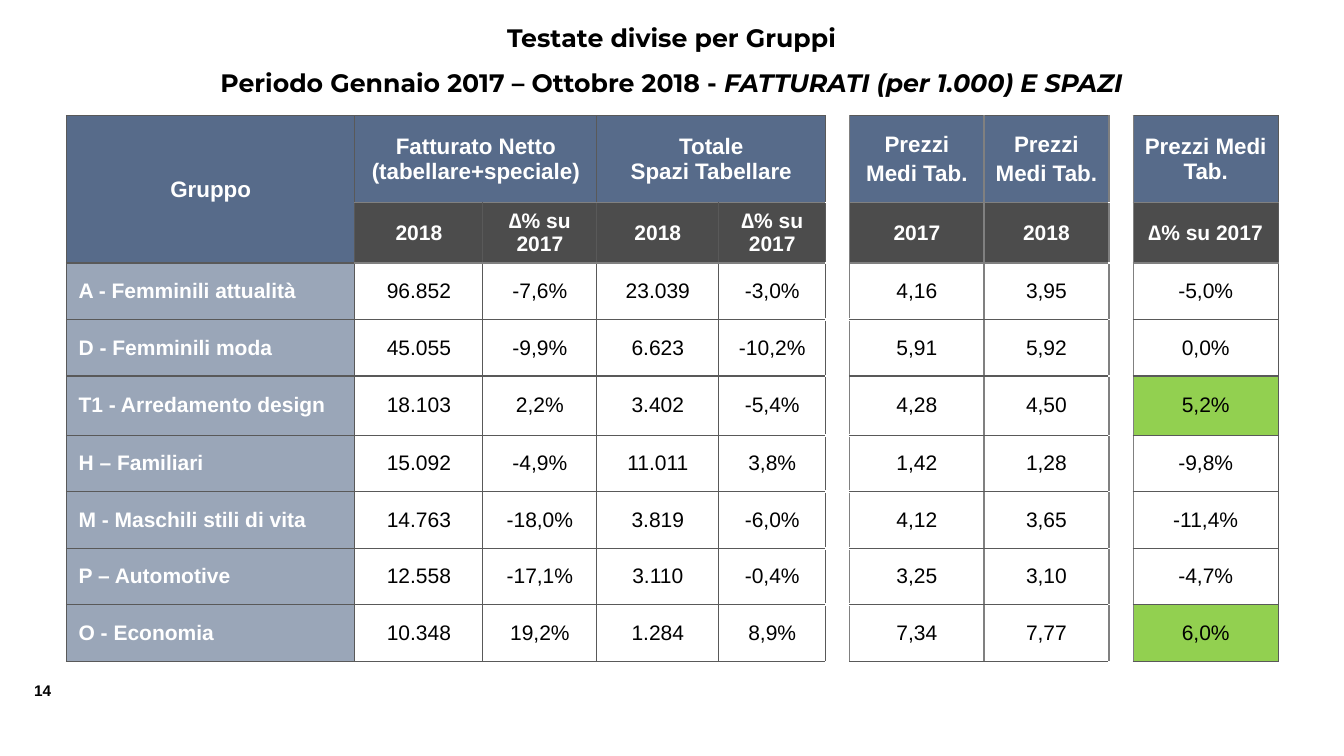
from lxml.etree import SubElement
from pptx import Presentation
from pptx.dml.color import RGBColor
from pptx.enum.text import MSO_ANCHOR as ANCHOR, PP_ALIGN as ALIGN
from pptx.oxml.ns import qn
from pptx.util import Inches, Pt

COLORS = {
    "blue": "576B8A", "black": "000000", "white": "FFFFFF", "green": "92D050",
    "dark": "595959", "grey": "808080",
}
SLIDE_W, SLIDE_H = Inches(13.33), Inches(7.5)

# Table grid, in inches
COL_WIDTHS = [2.86, 1.27, 1.13, 1.21, 1.06, 0.24, 1.33, 1.24, 0.24, 1.44]
ROW_HEIGHTS = [0.86, 0.6, 0.56, 0.56, 0.59, 0.56, 0.56, 0.56, 0.56]
GAP_COLS = (5, 8)
HEADER_ROWS = 2
MERGES = [((0, 0), (1, 0)), ((0, 1), (0, 2)), ((0, 3), (0, 4))]
HIGHLIGHTS = ("5,2%", "6,0%")

DELTA, PRICES = "∆% su 2017", "Prezzi\nMedi Tab."
ROWS = [
    ["Gruppo", "Fatturato Netto (tabellare+speciale)", "", "Totale\nSpazi Tabellare", "",
     "", PRICES, PRICES, "", "Prezzi Medi Tab."],
    ["", "2018", DELTA, "2018", DELTA, "", "2017", "2018", "", DELTA],
    ["A - Femminili attualità", "96.852", "-7,6%", "23.039", "-3,0%", "", "4,16", "3,95", "", "-5,0%"],
    ["D - Femminili moda", "45.055", "-9,9%", "6.623", "-10,2%", "", "5,91", "5,92", "", "0,0%"],
    ["T1 - Arredamento design", "18.103", "2,2%", "3.402", "-5,4%", "", "4,28", "4,50", "", "5,2%"],
    ["H – Familiari", "15.092", "-4,9%", "11.011", "3,8%", "", "1,42", "1,28", "", "-9,8%"],
    ["M - Maschili stili di vita", "14.763", "-18,0%", "3.819", "-6,0%", "", "4,12", "3,65", "", "-11,4%"],
    ["P – Automotive", "12.558", "-17,1%", "3.110", "-0,4%", "", "3,25", "3,10", "", "-4,7%"],
    ["O - Economia", "10.348", "19,2%", "1.284", "8,9%", "", "7,34", "7,77", "", "6,0%"],
]


def rgb(name):
    return RGBColor.from_string(COLORS[name])


def place(left, top, width, height):
    """Turn percentages of the slide into lengths."""
    return [int(side * share / 100) for side, share in
            zip((SLIDE_W, SLIDE_H) * 2, (left, top, width, height))]


def style_font(font, size, color="black", bold=True, name="Arial"):
    font.name, font.size, font.bold = name, Pt(size), bold
    font.color.rgb = rgb(color)


def add_title(slide):
    tf = slide.shapes.add_textbox(*place(8.33, 0.27, 83.27, 14.27)).text_frame
    tf.word_wrap = True
    tf.text = "Testate divise per Gruppi\nPeriodo Gennaio 2017 – Ottobre 2018 - "
    emphasis = tf.paragraphs[1].add_run()
    emphasis.text = "FATTURATI (per 1.000) E SPAZI"
    emphasis.font.italic = True
    for p in tf.paragraphs:
        p.alignment, p.line_spacing = ALIGN.CENTER, 1.5
        for r in p.runs:
            style_font(r.font, 18, name="Montserrat")


def add_page_number(slide):
    tf = slide.shapes.add_textbox(*place(1.8, 89.47, 3.15, 3.87)).text_frame
    tf.text = "14"
    style_font(tf.paragraphs[0].runs[0].font, 11)


def column_edge(edge):
    return ("grey" if 6 <= edge <= 9 else "dark"), 1


def row_edge(edge, col):
    if col in GAP_COLS:
        inner = col == GAP_COLS[0] and HEADER_ROWS < edge < len(ROWS)
        return "white", 2.25 if inner else 1
    return ("grey" if col and edge in (1, 2) else "dark"), 1


def set_borders(cell, row, col):
    edges = {"lnL": column_edge(col), "lnR": column_edge(col + 1),
             "lnT": row_edge(row, col), "lnB": row_edge(row + 1, col)}
    tc_pr = cell._tc.get_or_add_tcPr()
    for tag, (color, width) in edges.items():
        ln = SubElement(tc_pr, qn(f"a:{tag}"), w=str(Pt(width)))
        fill = SubElement(ln, qn("a:solidFill"))
        SubElement(fill, qn("a:srgbClr"), val=COLORS[color])


def cell_fill(row, col, text):
    """Give the colour and opacity of a cell."""
    if col in GAP_COLS:
        return "white", 100
    if row == 0:
        return "blue", 100
    if row < HEADER_ROWS:
        return "black", 70
    if col == 0:
        return "blue", 60
    return ("green" if text in HIGHLIGHTS else "white"), 100


def set_fill(cell, color, opacity):
    cell.fill.solid()
    cell.fill.fore_color.rgb = rgb(color)
    if opacity < 100:
        clr = cell._tc.tcPr.find(f"{qn('a:solidFill')}/{qn('a:srgbClr')}")
        SubElement(clr, qn("a:alpha"), val=str(opacity * 1000))


def set_text(cell, row, col, text):
    header, label = row < HEADER_ROWS, col == 0
    cell.vertical_anchor = ANCHOR.MIDDLE
    if not header:
        cell.margin_left = Inches(0.12 if label else 0)
        cell.margin_right = cell.margin_top = cell.margin_bottom = 0
    cell.text_frame.text = text
    for i, p in enumerate(cell.text_frame.paragraphs):
        p.alignment = ALIGN.LEFT if label and not header else ALIGN.CENTER
        if i and text == PRICES:
            p.space_before = Pt(3)
        for r in p.runs:
            strong = header or label
            style_font(r.font, 16 if row == 0 else 15, "white" if strong else "black", strong)


def add_groups_table(slide):
    frame = slide.shapes.add_table(len(ROWS), len(COL_WIDTHS), *place(4.95, 15.33, 90.1, 72))
    table = frame.table
    table.first_row = table.horz_banding = False
    for column, width in zip(table.columns, COL_WIDTHS):
        column.width = Inches(width)
    for table_row, height in zip(table.rows, ROW_HEIGHTS):
        table_row.height = Inches(height)
    for first, last in MERGES:
        table.cell(*first).merge(table.cell(*last))
    for row, texts in enumerate(ROWS):
        for col, text in enumerate(texts):
            cell = table.cell(row, col)
            if cell.is_spanned:
                continue
            set_borders(cell, row, col)
            set_fill(cell, *cell_fill(row, col, text))
            if text:
                set_text(cell, row, col, text)


def main():
    prs = Presentation()
    prs.slide_width, prs.slide_height = SLIDE_W, SLIDE_H
    s = prs.slides.add_slide(prs.slide_layouts[6])
    add_page_number(s)
    add_title(s)
    add_groups_table(s)
    prs.save("out.pptx")


if __name__ == "__main__":
    main()
